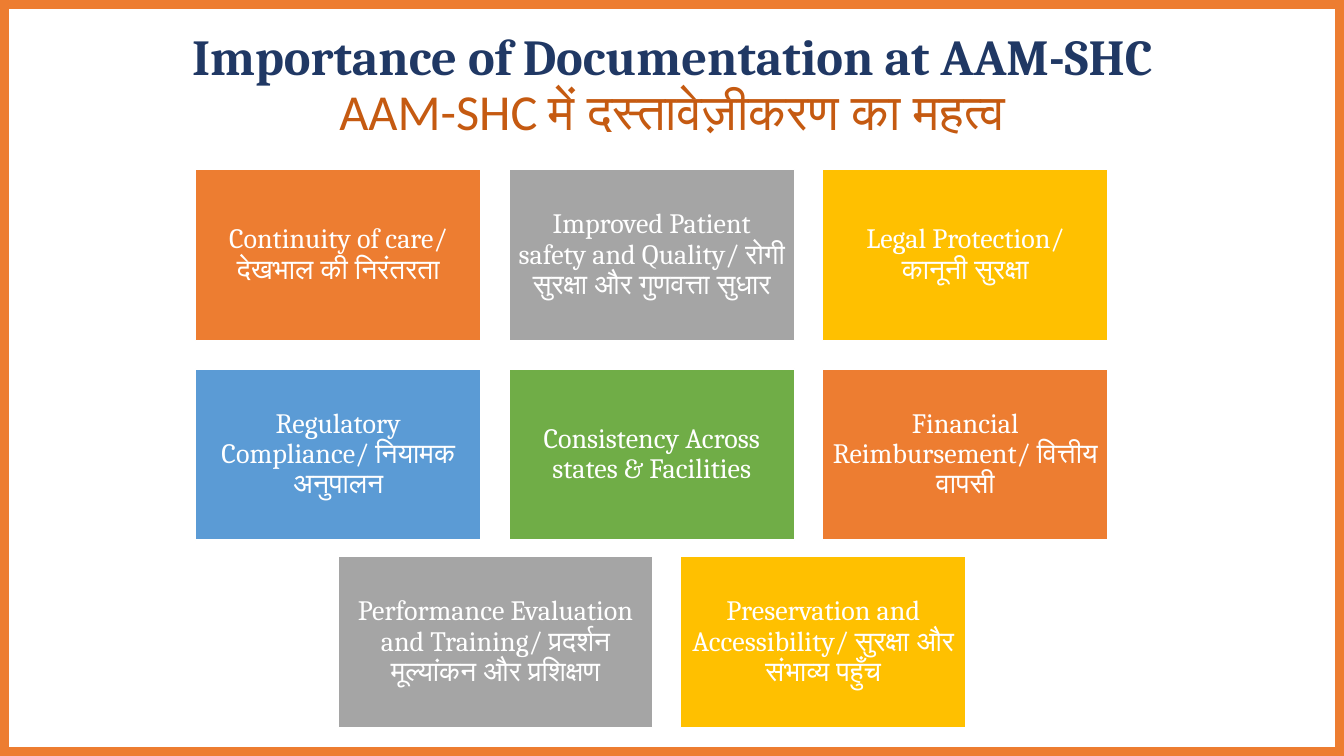
from dataclasses import dataclass

from pptx import Presentation
from pptx.dml.color import RGBColor
from pptx.enum.shapes import MSO_SHAPE
from pptx.enum.text import MSO_ANCHOR, PP_ALIGN
from pptx.slide import Slide
from pptx.text.text import TextFrame
from pptx.util import Inches, Pt


@dataclass(frozen=True)
class Theme:
    orange: str = "ED7D31"
    gray: str = "A5A5A5"
    gold: str = "FFC000"
    blue: str = "5B9BD5"
    green: str = "70AD47"
    white: str = "FFFFFF"
    navy: str = "203864"
    rust: str = "C55A11"
    serif: str = "Cambria"
    sans: str = "Calibri"
    head: int = 36
    body: int = 20


@dataclass(frozen=True)
class Card:
    text: str
    fill: str
    width: float = 2.83


@dataclass(frozen=True)
class Row:
    left: float
    top: float
    cards: tuple[Card, ...]


THEME = Theme()
WIDTH, HEIGHT, EDGE = 13.33, 7.5, 0.08
TALL, GAP, INSET = 1.7, 0.28, 0.08

ROWS = (
    Row(1.94, 1.68, (
        Card("Continuity of care/ देखभाल की निरंतरता", THEME.orange),
        Card("Improved Patient safety and Quality/ रोगी सुरक्षा और गुणवत्ता सुधार", THEME.gray),
        Card("Legal Protection/ कानूनी सुरक्षा", THEME.gold),
    )),
    Row(1.94, 3.66, (
        Card("Regulatory Compliance/ नियामक अनुपालन", THEME.blue),
        Card("Consistency Across states & Facilities", THEME.green),
        Card("Financial Reimbursement/ वित्तीय वापसी", THEME.orange),
    )),
    Row(3.36, 5.52, (
        Card("Performance Evaluation and Training/ प्रदर्शन मूल्यांकन और प्रशिक्षण", THEME.gray, 3.11),
        Card("Preservation and Accessibility/ सुरक्षा और संभाव्य पहुँच", THEME.gold),
    )),
)


def apply(target: object, values: dict) -> None:
    for name, value in values.items():
        setattr(target, name, value)


def paint(shape, fill: str, line: str) -> None:
    shape.shadow.inherit = False
    shape.fill.solid()
    shape.fill.fore_color.rgb = RGBColor.from_string(fill)
    shape.line.color.rgb = RGBColor.from_string(line)
    shape.line.width = Pt(1)


def write(frame: TextFrame, index: int, text: str, color: str, style: dict) -> None:
    para = frame.add_paragraph() if index else frame.paragraphs[0]
    apply(para, {"alignment": PP_ALIGN.CENTER, "line_spacing": 0.9})
    run = para.add_run()
    run.text = text
    apply(run.font, style)
    run.font.color.rgb = RGBColor.from_string(color)


def draw_frame(slide: Slide) -> None:
    right, low = WIDTH - EDGE, HEIGHT - EDGE
    outer = [(WIDTH, 0), (WIDTH, HEIGHT), (0, HEIGHT)]
    inner = [(EDGE, low), (right, low), (right, EDGE)]
    pen = slide.shapes.build_freeform(0, 0)
    pen.add_line_segments([(Inches(x), Inches(y)) for x, y in outer])
    pen.move_to(Inches(EDGE), Inches(EDGE))
    pen.add_line_segments([(Inches(x), Inches(y)) for x, y in inner])
    paint(pen.convert_to_shape(), THEME.orange, THEME.orange)


def draw_title(slide: Slide) -> None:
    box = slide.shapes.add_textbox(Inches(0.15), Inches(0.27), Inches(13.04), Inches(0.98))
    frame = box.text_frame
    frame.word_wrap = True
    lines = (
        ("Importance of Documentation at AAM-SHC", THEME.navy, THEME.serif, True),
        ("AAM-SHC में दस्तावेज़ीकरण का महत्व", THEME.rust, THEME.sans, False),
    )
    for index, (text, color, font, bold) in enumerate(lines):
        style = {"name": font, "size": Pt(THEME.head), "bold": bold}
        write(frame, index, text, color, style)


def draw_card(slide: Slide, card: Card, left: float, top: float) -> None:
    shape = slide.shapes.add_shape(
        MSO_SHAPE.RECTANGLE, Inches(left), Inches(top), Inches(card.width), Inches(TALL))
    paint(shape, card.fill, THEME.white)
    frame = shape.text_frame
    sides = ("left", "right", "top", "bottom")
    apply(frame, {f"margin_{side}": Inches(INSET) for side in sides})
    apply(frame, {"word_wrap": True, "vertical_anchor": MSO_ANCHOR.MIDDLE})
    write(frame, 0, card.text, THEME.white, {"name": THEME.serif, "size": Pt(THEME.body)})


def main() -> None:
    deck = Presentation()
    apply(deck, {"slide_width": Inches(WIDTH), "slide_height": Inches(HEIGHT)})
    slide = deck.slides.add_slide(deck.slide_layouts[6])

    # Border and bilingual title
    draw_frame(slide)
    draw_title(slide)

    # Reasons, laid out row by row
    for row in ROWS:
        left = row.left
        for card in row.cards:
            draw_card(slide, card, left, row.top)
            left += card.width + GAP

    deck.save("out.pptx")


if __name__ == "__main__":
    main()
